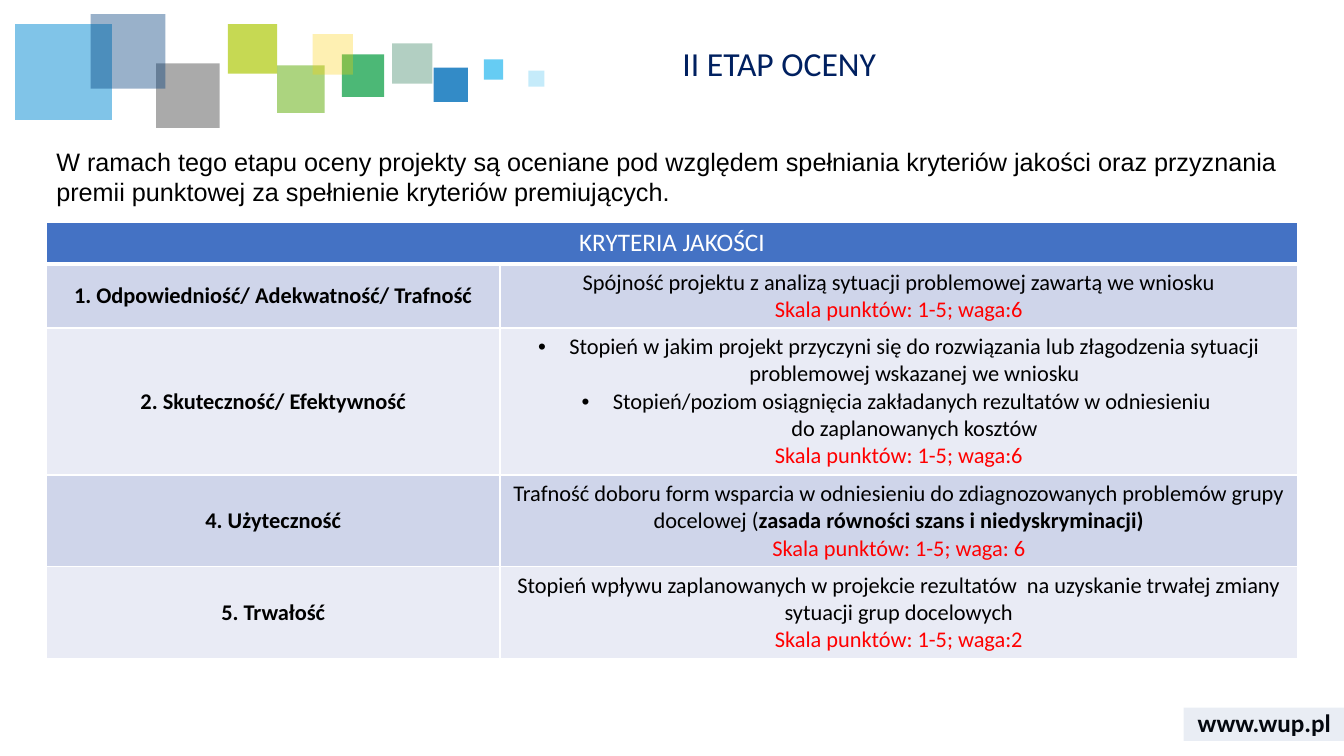
from lxml.etree import SubElement
from pptx import Presentation
from pptx.dml.color import RGBColor
from pptx.enum.shapes import MSO_SHAPE
from pptx.enum.text import MSO_ANCHOR, PP_ALIGN
from pptx.oxml import parse_xml
from pptx.oxml.ns import nsdecls, qn
from pptx.util import Pt

EMU_PER_PX = 9144  # 100 px to the inch


def px(length):
    return length * EMU_PER_PX


def colour(value):
    return RGBColor.from_string(value)


class SlideBuilder:
    """Holds the style and the current slide."""

    FONT = "Calibri"
    INK, NAVY, RED, WHITE = "000000", "002060", "FF0000", "FFFFFF"
    HEADER, BANDS = "4472C4", ("CFD5EA", "E9EBF5")

    def __init__(self, deck):
        self.page = deck.slides.add_slide(deck.slide_layouts[6])

    def add_words(self, para, text, **changes):
        style = {"name": self.FONT, "size": 16, "bold": False, "color": self.INK}
        style.update(changes)
        for index, line in enumerate(text.split("\n")):
            if index:
                para.add_line_break()
            span = para.add_run()
            span.text = line
            values = {"name": style["name"], "size": Pt(style["size"]), "bold": style["bold"]}
            for key, value in values.items():
                setattr(span.font, key, value)
            span.font.color.rgb = colour(style["color"])

    def text(self, place, words, align=PP_ALIGN.LEFT, anchor=MSO_ANCHOR.TOP, spacing=1.0, **style):
        box = self.page.shapes.add_textbox(*map(px, place))
        frame = box.text_frame
        for key, value in {"word_wrap": True, "vertical_anchor": anchor}.items():
            setattr(frame, key, value)
        para = frame.paragraphs[0]
        para.alignment = align
        para.line_spacing = spacing
        self.add_words(para, words, **style)

    def square(self, place, fill, opacity):
        shape = self.page.shapes.add_shape(MSO_SHAPE.RECTANGLE, *map(px, place))
        shape.shadow.inherit = False
        shape.line.fill.background()
        shape.fill.solid()
        shape.fill.fore_color.rgb = colour(fill)
        tint = shape.element.spPr.find(qn("a:solidFill"))[0]
        SubElement(tint, qn("a:alpha")).set("val", str(opacity * 1000))

    def bullet(self, para):
        properties = para._p.get_or_add_pPr()
        properties.set("marL", str(px(31)))
        properties.set("indent", str(px(-31)))
        SubElement(properties, qn("a:buFont")).set("typeface", "Arial")
        SubElement(properties, qn("a:buChar")).set("char", "•")

    def cell(self, cell, paragraphs, fill, bottom=1, anchor=MSO_ANCHOR.TOP):
        cell.vertical_anchor = anchor
        cell.fill.solid()
        cell.fill.fore_color.rgb = colour(fill)
        for index, (side, width) in enumerate({"L": 1, "R": 1, "T": 1, "B": bottom}.items()):
            border = parse_xml(
                f'<a:ln{side} {nsdecls("a")} w="{Pt(width)}"><a:solidFill>'
                f'<a:srgbClr val="{self.WHITE}"/></a:solidFill></a:ln{side}>')
            cell._tc.get_or_add_tcPr().insert(index, border)
        frame = cell.text_frame
        for index, (bulleted, spans) in enumerate(paragraphs):
            para = frame.add_paragraph() if index else frame.paragraphs[0]
            para.alignment = PP_ALIGN.CENTER
            if bulleted:
                self.bullet(para)
            for words, style in spans:
                self.add_words(para, words, **style)

    def table(self, place, widths, heights, heading, criteria):
        frame = self.page.shapes.add_table(len(heights), len(widths), *map(px, place))
        table = frame.table
        for column, width in zip(table.columns, widths):
            column.width = px(width)
        for row, height in zip(table.rows, heights):
            row.height = px(height)
        table.cell(0, 0).merge(table.cell(0, 1))
        title = [(False, [(heading, {"size": 18, "color": self.WHITE})])]
        self.cell(table.cell(0, 0), title, self.HEADER, bottom=3)
        self.cell(table.cell(0, 1), [], self.HEADER, bottom=3)
        for index, (name, details, score) in enumerate(criteria):
            fill = self.BANDS[index % 2]
            label = [(False, [(name, {"bold": True})])]
            scale = (False, [("Skala punktów: " + score, {"color": self.RED})])
            self.cell(table.cell(index + 1, 0), label, fill, anchor=MSO_ANCHOR.MIDDLE)
            self.cell(table.cell(index + 1, 1), details + [scale], fill)


# Decorative squares: place, colour, opacity in percent
SQUARES = [
    ((389, 43, 40, 40), "006138", 30),
    ((430, 67, 34, 34), "006EB9", 80),
    ((339, 54, 42, 42), "009A3C", 70),
    ((15, 24, 96, 95), "028BD3", 50),
    ((275, 65, 47, 47), "75B82A", 60),
    ((155, 63, 63, 64), "575757", 50),
    ((90, 14, 74, 74), "003D7C", 40),
    ((480, 59, 19, 20), "40C0F1", 80),
    ((226, 24, 49, 49), "AFCA0B", 70),
    ((310, 34, 40, 40), "FED000", 30),
    ((524, 70, 16, 16), "40C0F1", 30),
]

# Criteria: name, paragraphs (bulleted, spans), score
CRITERIA = [
    ("1. Odpowiedniość/ Adekwatność/ Trafność",
     [(False, [("Spójność projektu z analizą sytuacji problemowej zawartą we wniosku", {})])],
     "1-5; waga:6"),
    ("2. Skuteczność/ Efektywność",
     [(True, [("Stopień w jakim projekt przyczyni się do rozwiązania lub złagodzenia "
               "sytuacji problemowej wskazanej we wniosku", {})]),
      (True, [("Stopień/poziom osiągnięcia zakładanych rezultatów w odniesieniu \n"
               "do zaplanowanych kosztów", {})])],
     "1-5; waga:6"),
    ("4. Użyteczność",
     [(False, [("Trafność doboru form wsparcia w odniesieniu do zdiagnozowanych "
                "problemów grupy docelowej (", {}),
               ("zasada równości szans i niedyskryminacji)", {"bold": True})])],
     "1-5; waga: 6"),
    ("5. Trwałość",
     [(False, [("Stopień wpływu zaplanowanych w projekcie rezultatów  na uzyskanie "
                "trwałej zmiany sytuacji grup docelowych", {})])],
     "1-5; waga:2"),
]


def main():
    deck = Presentation()
    deck.slide_width, deck.slide_height = px(1333), px(750)
    builder = SlideBuilder(deck)

    # Web address and its tinted band
    builder.text((1174, 697, 160, 40), "www.wup.pl", PP_ALIGN.CENTER, MSO_ANCHOR.MIDDLE,
                 size=18, bold=True)
    for place, fill, opacity in SQUARES:
        builder.square(place, fill, opacity)
    builder.square((1174, 702, 160, 33), "2F5597", 10)

    # Criteria table
    builder.table((46, 221, 1241, 432), (450, 791), (41, 63, 146, 91, 91),
                  "KRYTERIA JAKOŚCI", CRITERIA)

    # Introduction and title
    builder.text((46, 140, 1241, 71),
                 "W ramach tego etapu oceny projekty są oceniane pod względem spełniania "
                 "kryteriów jakości oraz przyznania premii punktowej za spełnienie "
                 "kryteriów premiujących.", name="Arial", size=18)
    builder.text((667, 42, 636, 55), "II ETAP OCENY", spacing=0.9,
                 size=24, color=builder.NAVY)

    deck.save("out.pptx")


if __name__ == "__main__":
    main()
